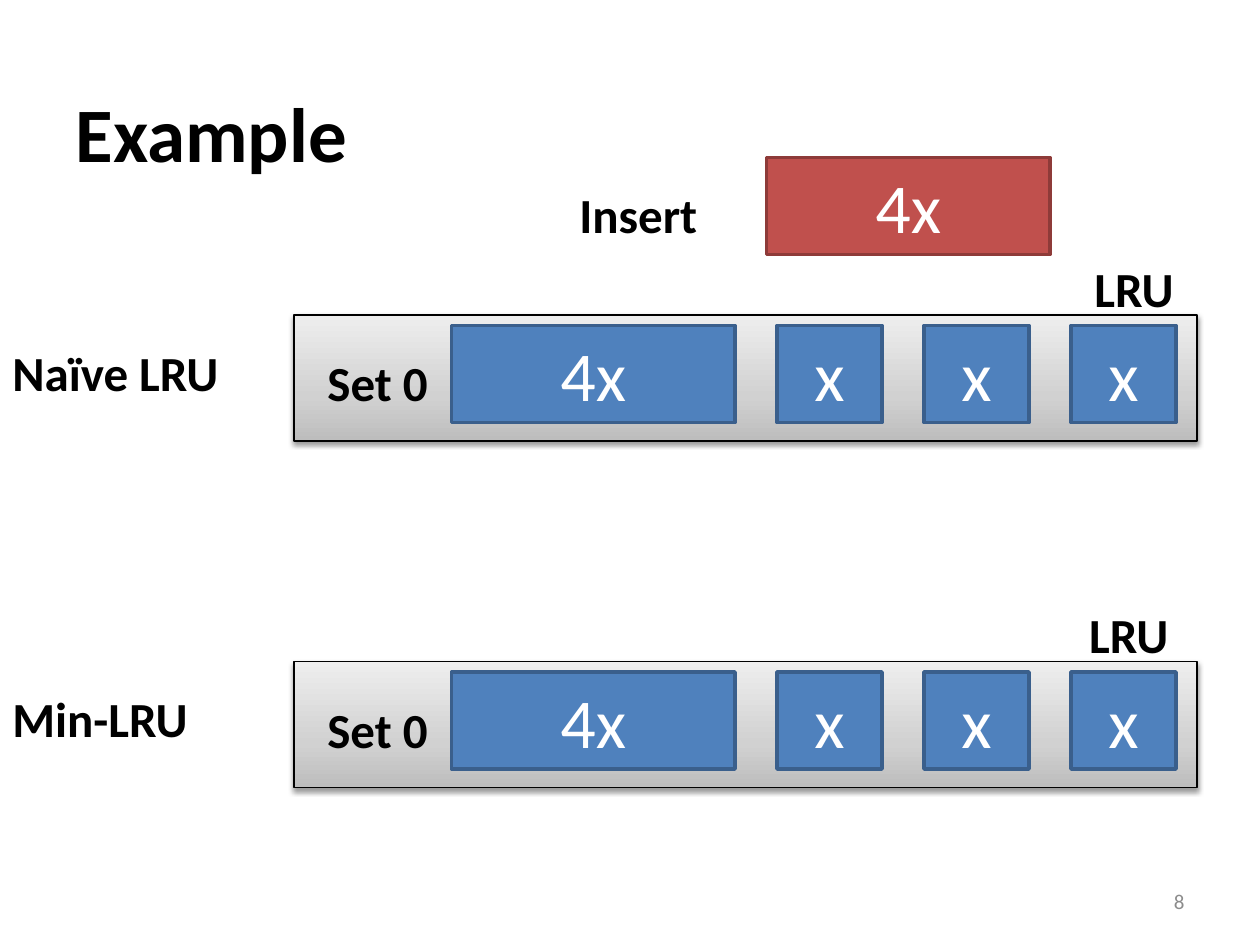
import pptx
import pptx.util
import pptx.dml.color
import pptx.enum.shapes
import pptx.enum.text
import pptx.oxml
import pptx.oxml.ns

THEME = {
    "font": "Calibri",
    "title": 44, "cell": 40, "label": 28, "number": 12,
    "black": "000000", "white": "FFFFFF", "grey": "8C8C8C",
    "blue": ("4F81BD", "3A5F8C"), "red": ("C0504D", "8E3B39"),
    "set_stops": ((0, "BDBDBD"), (35, "D1D1D1"), (100, "EEEEEE")),
}
ALIGN = pptx.enum.text.PP_ALIGN
ANCHOR = pptx.enum.text.MSO_ANCHOR
RECTANGLE = pptx.enum.shapes.MSO_SHAPE.RECTANGLE
rgb = pptx.dml.color.RGBColor.from_string

prs = pptx.Presentation()
prs.slide_width, prs.slide_height = pptx.util.Inches(10), pptx.util.Inches(7.5)
UNIT = prs.slide_width / 120  # grid of 120 columns and 90 rows
CELL_HEIGHT, LABEL_HEIGHT = 9.25, 6.85
slide = prs.slides.add_slide(prs.slide_layouts[5])


def write(part, text, size, color, align=ALIGN.LEFT, bold=True, anchor=ANCHOR.TOP, grow=True):
    frame = part.text_frame
    frame.text = text
    frame.word_wrap = True
    frame.vertical_anchor = anchor
    fit = pptx.enum.text.MSO_AUTO_SIZE
    frame.auto_size = fit.SHAPE_TO_FIT_TEXT if grow else fit.NONE
    paragraph = frame.paragraphs[0]
    paragraph.alignment = align
    paragraph.font.name = THEME["font"]
    paragraph.font.size = pptx.util.Pt(THEME[size])
    paragraph.font.bold = bold
    paragraph.font.color.rgb = rgb(THEME[color])


def add_cell(column, row, columns, text, palette):
    cell = slide.shapes.add_shape(RECTANGLE, *(round(n * UNIT) for n in (column, row, columns, CELL_HEIGHT)))
    cell.shadow.inherit = False
    fill, line = THEME[palette]
    cell.fill.solid()
    cell.fill.fore_color.rgb = rgb(fill)
    cell.line.color.rgb = rgb(line)
    cell.line.width = pptx.util.Pt(2)
    write(cell, text, "cell", "white", ALIGN.CENTER, bold=False)


# Title
title = slide.shapes.title
title.left, title.top, title.width, title.height = (round(n * UNIT) for n in (6, 5, 108, 15))
write(title, "Example", "title", "black", anchor=ANCHOR.MIDDLE, grow=False)

# Cache sets: one bar with four entries per policy
namespace = pptx.oxml.ns.nsdecls("a")
stops = "".join(f'<a:gs pos="{share * 1000}"><a:srgbClr val="{color}"/></a:gs>'
                for share, color in THEME["set_stops"])
gradient = (f'<a:gradFill {namespace} rotWithShape="1"><a:gsLst>{stops}</a:gsLst>'
            '<a:lin ang="16200000" scaled="0"/></a:gradFill>')
shadow = (f'<a:outerShdw {namespace} blurRad="40000" dist="20000" dir="5400000" rotWithShape="0">'
          '<a:srgbClr val="000000"><a:alpha val="38000"/></a:srgbClr></a:outerShdw>')

for row in (30, 63):
    cache_set = slide.shapes.add_shape(RECTANGLE, *(round(n * UNIT) for n in (28, row, 86, 12)))
    cache_set.line.color.rgb = rgb(THEME["black"])
    cache_set.line.width = pptx.util.Pt(0.75)
    cache_set.shadow.inherit = False
    properties = cache_set._element.spPr
    properties.find(pptx.oxml.ns.qn("a:prstGeom")).addnext(pptx.oxml.parse_xml(gradient))
    properties.find(pptx.oxml.ns.qn("a:effectLst")).append(pptx.oxml.parse_xml(shadow))

    add_cell(43, row + 1, 27, "4x", "blue")
    for entry in range(3):
        add_cell(74 + 14 * entry, row + 1, 10, "x", "blue")

# Inserted entry
add_cell(73, 15, 27, "4x", "red")

# Labels: text, column, row, columns, alignment
for text, column, row, columns, align in (
    ("Insert", 54, 17, 17, ALIGN.LEFT),
    ("Naïve LRU", 0, 32, 27, ALIGN.LEFT),
    ("Set 0", 30, 33, 15, ALIGN.LEFT),
    ("LRU", 101, 24, 14, ALIGN.CENTER),
    ("Min-LRU", 0, 65, 23, ALIGN.LEFT),
    ("Set 0", 30, 66, 13, ALIGN.LEFT),
    ("LRU", 99, 57, 17, ALIGN.CENTER),
):
    label = slide.shapes.add_textbox(*(round(n * UNIT) for n in (column, row, columns, LABEL_HEIGHT)))
    write(label, text, "label", "black", align)

# Slide number
number = slide.shapes.add_textbox(*(round(n * UNIT) for n in (86, 83.4, 28, 4.8)))
write(number, "8", "number", "grey", ALIGN.RIGHT, bold=False, anchor=ANCHOR.MIDDLE, grow=False)

prs.save("out.pptx")
